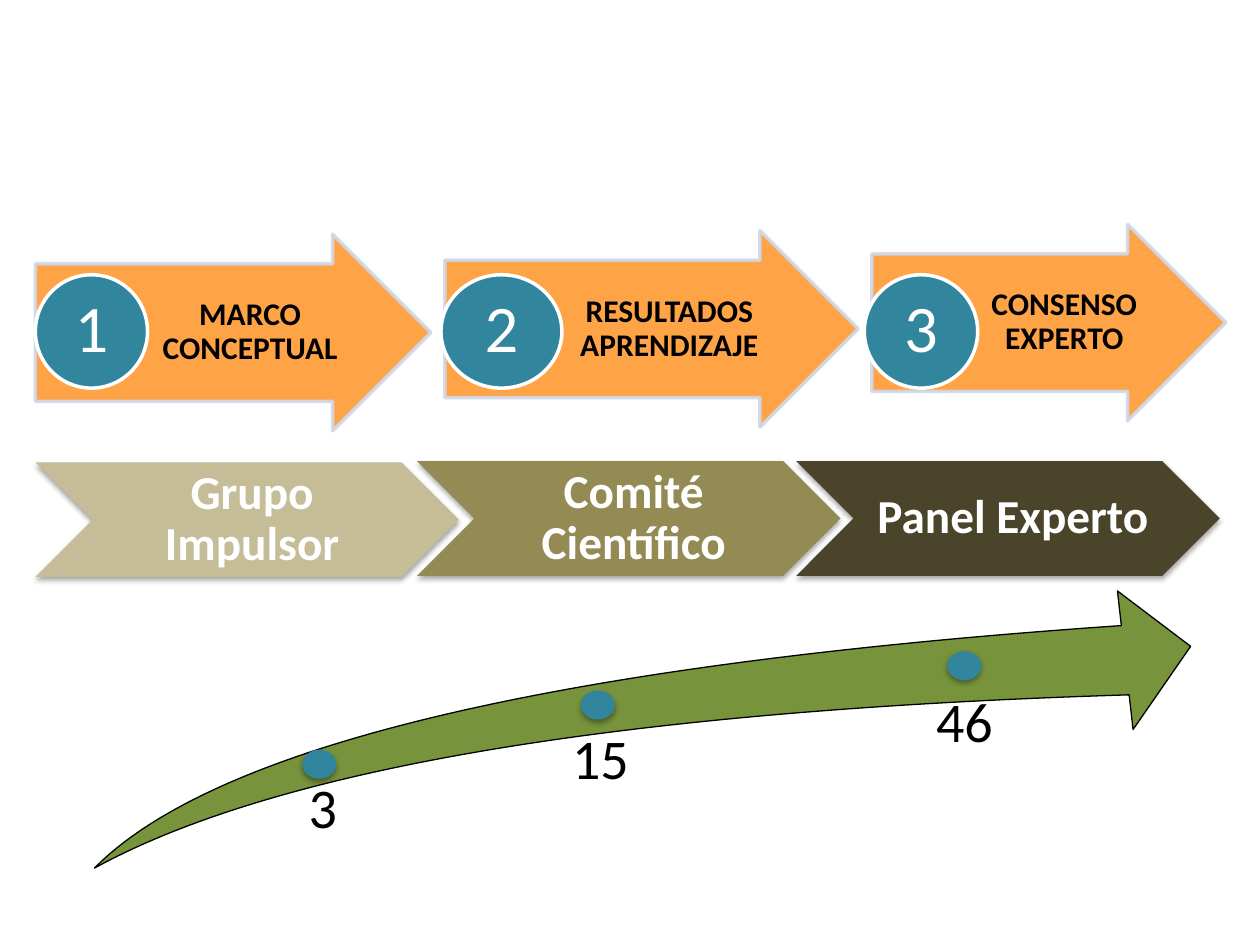
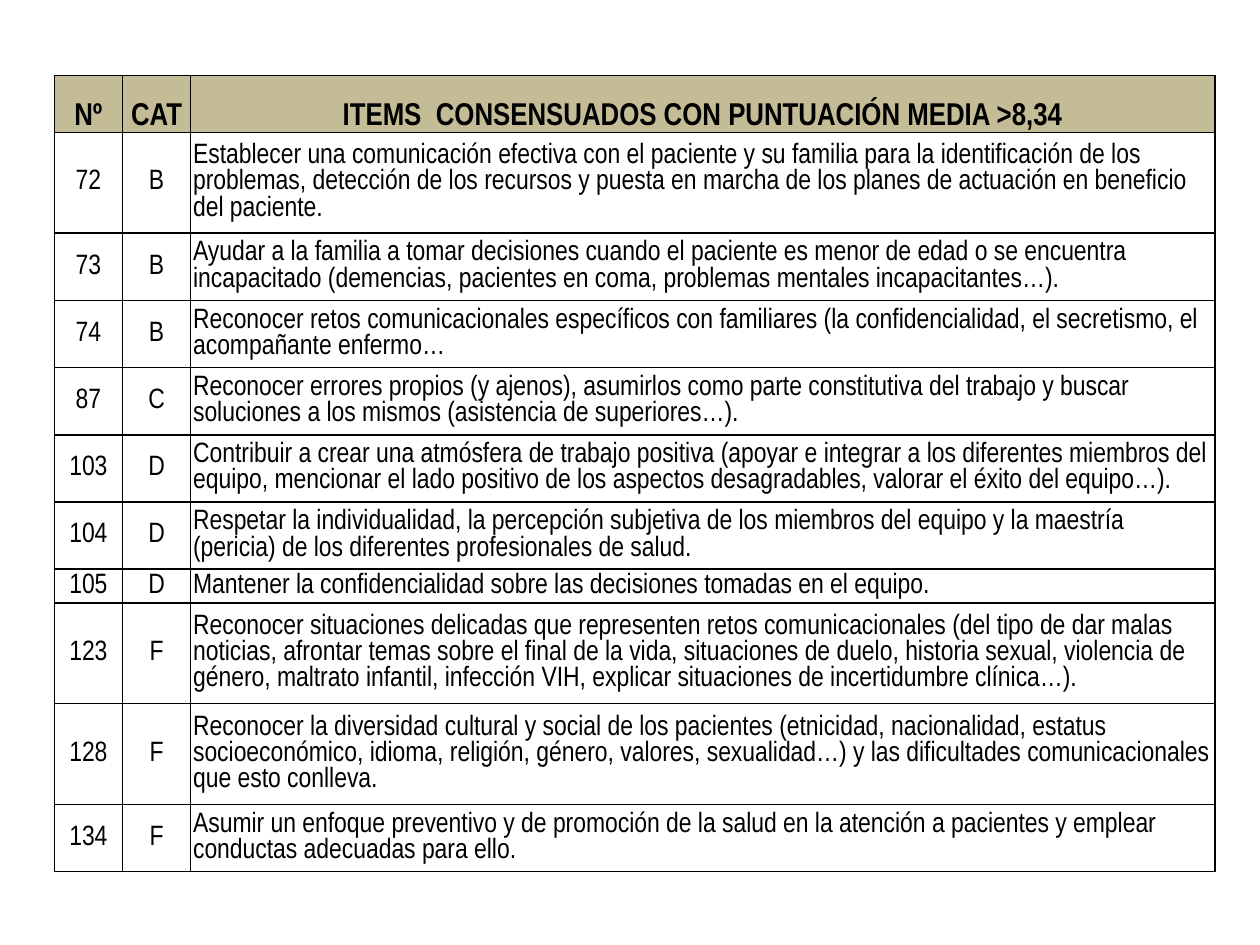
from lxml.etree import SubElement
from pptx import Presentation
from pptx.dml.color import RGBColor
from pptx.enum.shapes import MSO_SHAPE as Preset
from pptx.enum.text import MSO_ANCHOR as Anchor, PP_ALIGN as Align
from pptx.oxml.ns import qn
from pptx.util import Pt

BLACK, WHITE = "000000", "FFFFFF"
ORANGE, TEAL, PALE_BLUE, GREEN = "FF9933", "31859C", "D0D8E8", "77933C"
HEADER_FILL = "C4BC96"
DIAGRAM_FONT, TABLE_FONT = "Calibri", "Arial Narrow"

PHASES = [
    ("MARCO CONCEPTUAL", 20.2, 133.9, 226, 20.2, 64.1),
    ("RESULTADOS APRENDIZAJE", 254.2, 131.8, 236.2, 252, 69.1),
    ("CONSENSO EXPERTO", 498.2, 128.2, 202.3, 493.9, 64.8),
]
GROUPS = [
    ("Grupo Impulsor", 20.2, 264.2, "C4BD97"),
    ("Comité Científico", 238.3, 263.5, "948A54"),
    ("Panel Experto", 455, 263.5, "4A452A"),
]
MEMBERS = [
    ("3", (172.8, 428.4), (176.4, 445.7)),
    ("15", (331.9, 394.6), (326.9, 417.6)),
    ("46", (541.4, 372.2), (534.9, 396.7)),
]
ARROW_HEIGHT = 112.3
ARROW_BODY = 0.7
CIRCLE_TOP, CIRCLE_HEIGHT = 157, 64.8
CHEVRON_SIZE = (242, 65.5)
SWOOSH_BOX = (54, 337.7, 626.4, 158.4)
DOT_SIZE = (19.4, 16.6)

COLUMN_WIDTHS = [39, 39, 585.2]
TABLE_LEFT, TABLE_TOP = 31, 43.2
HEADER_HEIGHT, LINE_HEIGHT = 32.4, 19.2
HEADERS = ("Nº", "CAT", "ITEMS  CONSENSUADOS CON PUNTUACIÓN MEDIA >8,34")
ITEMS = [
    (3, "72", "B", "Establecer una comunicación efectiva con el paciente y su familia para la "
     "identificación de los problemas, detección de los recursos y puesta en marcha de los "
     "planes de actuación en beneficio del paciente."),
    (2, "73", "B", "Ayudar a la familia a tomar decisiones cuando el paciente es menor de edad o se "
     "encuentra incapacitado (demencias, pacientes en coma, problemas mentales incapacitantes…)."),
    (2, "74", "B", "Reconocer retos comunicacionales específicos con familiares (la "
     "confidencialidad, el secretismo, el acompañante enfermo…"),
    (2, "87", "C", "Reconocer errores propios (y ajenos), asumirlos como parte constitutiva del "
     "trabajo y buscar soluciones a los mismos (asistencia de superiores…)."),
    (2, "103", "D", "Contribuir a crear una atmósfera de trabajo positiva (apoyar e integrar a los "
     "diferentes miembros del equipo, mencionar el lado positivo de los aspectos "
     "desagradables, valorar el éxito del equipo…)."),
    (2, "104", "D", "Respetar la individualidad, la percepción subjetiva de los miembros del equipo "
     "y la maestría (pericia) de los diferentes profesionales de salud."),
    (1, "105", "D", "Mantener la confidencialidad sobre las decisiones tomadas en el equipo."),
    (3, "123", "F", "Reconocer situaciones delicadas que representen retos comunicacionales (del "
     "tipo de dar malas noticias, afrontar temas sobre el final de la vida, situaciones de "
     "duelo, historia sexual, violencia de género, maltrato infantil, infección VIH, explicar "
     "situaciones de incertidumbre clínica…)."),
    (3, "128", "F", "Reconocer la diversidad cultural y social de los pacientes (etnicidad, "
     "nacionalidad, estatus socioeconómico, idioma, religión, género, valores, sexualidad…) y "
     "las dificultades comunicacionales que esto conlleva."),
    (2, "134", "F", "Asumir un enfoque preventivo y de promoción de la salud en la atención a "
     "pacientes y emplear conductas adecuadas para ello."),
]


def rgb(color):
    return RGBColor.from_string(color)


def points(values):
    return [Pt(value) for value in values]


def write(frame, text, *, size, font=DIAGRAM_FONT, color=BLACK, bold=False,
          align=Align.CENTER, spacing=0.9):
    paragraph = frame.paragraphs[0]
    paragraph.alignment = align
    paragraph.line_spacing = spacing
    run = paragraph.add_run()
    run.text = text
    run.font.name = font
    run.font.size = Pt(size)
    run.font.bold = bold
    run.font.color.rgb = rgb(color)


def set_frame(frame, insets, anchor):
    frame.word_wrap = True
    frame.vertical_anchor = anchor
    (frame.margin_left, frame.margin_top,
     frame.margin_right, frame.margin_bottom) = points(insets)


def add_text(slide, box, text, insets=(0, 0, 0, 0), anchor=Anchor.TOP, **style):
    frame = slide.shapes.add_textbox(*points(box)).text_frame
    set_frame(frame, insets, anchor)
    write(frame, text, **style)


def add_alpha(parent, percent):
    SubElement(parent, qn("a:alpha"), val=str(percent * 1000))


def add_figure(slide, preset, box, fill, line=None, line_width=1, opacity=100, shadow=False):
    shape = slide.shapes.add_shape(preset, *points(box))
    shape.fill.solid()
    shape.fill.fore_color.rgb = rgb(fill)
    if line:
        shape.line.color.rgb = rgb(line)
        shape.line.width = Pt(line_width)
    else:
        shape.line.fill.background()
    properties = shape.fill._xPr
    if opacity < 100:
        for color in properties.iter(qn("a:srgbClr")):
            add_alpha(color, opacity)
    shape.shadow.inherit = False
    if shadow:
        outer = SubElement(properties.find(qn("a:effectLst")), qn("a:outerShdw"),
                           blurRad=str(Pt(3.1)), dist=str(Pt(1.8)), dir="5400000",
                           rotWithShape="0")
        add_alpha(SubElement(outer, qn("a:srgbClr"), val=BLACK), 35)
    return shape


def add_phase(slide, number, name, left, top, width, circle_left, circle_width):
    arrow = add_figure(slide, Preset.RIGHT_ARROW, (left, top, width, ARROW_HEIGHT),
                       ORANGE, PALE_BLUE, 2, opacity=90)
    arrow.adjustments[0] = ARROW_BODY
    arrow.adjustments[1] = 0.5
    body_height = ARROW_HEIGHT * ARROW_BODY
    body_top = top + (ARROW_HEIGHT - body_height) / 2
    add_text(slide, (left + width * 0.25, body_top, width * 0.58, body_height), name,
             insets=(3.6, 0.7, 2.2, 0.7), anchor=Anchor.MIDDLE, size=18, bold=True)
    circle = add_figure(slide, Preset.OVAL, (circle_left, CIRCLE_TOP, circle_width, CIRCLE_HEIGHT),
                        TEAL, WHITE, 2)
    set_frame(circle.text_frame, (2.2, 2.2, 2.2, 2.2), Anchor.MIDDLE)
    write(circle.text_frame, str(number), size=38, color=WHITE)


def build_process(slide):
    for number, phase in enumerate(PHASES, 1):
        add_phase(slide, number, *phase)
    for name, left, top, color in GROUPS:
        chevron = add_figure(slide, Preset.CHEVRON, (left, top, *CHEVRON_SIZE), color, shadow=True)
        set_frame(chevron.text_frame, (8.6, 2.9, 2.9, 2.9), Anchor.MIDDLE)
        write(chevron.text_frame, name, size=27, color=WHITE, bold=True)
    swoosh = add_figure(slide, Preset.SWOOSH_ARROW, SWOOSH_BOX, GREEN, BLACK, 0.75)
    swoosh.adjustments[0] = swoosh.adjustments[1] = 0.25
    for count, dot, label in MEMBERS:
        add_figure(slide, Preset.OVAL, (*dot, *DOT_SIZE), TEAL, shadow=True)
        add_text(slide, (*label, 55, 40), count, size=32, align=Align.LEFT)


def format_cell(cell, text, fill, anchor, **style):
    cell.margin_left = cell.margin_right = Pt(1.4)
    cell.margin_top = cell.margin_bottom = 0
    cell.vertical_anchor = anchor
    properties = cell._tc.get_or_add_tcPr()
    for side in ("lnL", "lnR", "lnT", "lnB"):
        border = SubElement(properties, qn(f"a:{side}"), w=str(Pt(1)))
        SubElement(SubElement(border, qn("a:solidFill")), qn("a:srgbClr"), val=BLACK)
    cell.fill.solid()
    cell.fill.fore_color.rgb = rgb(fill)
    write(cell.text_frame, text, font=TABLE_FONT, **style)


def build_items(slide):
    heights = [HEADER_HEIGHT] + [lines * LINE_HEIGHT for lines, *_ in ITEMS]
    box = (TABLE_LEFT, TABLE_TOP, sum(COLUMN_WIDTHS), sum(heights))
    table = slide.shapes.add_table(len(heights), len(COLUMN_WIDTHS), *points(box)).table
    for column, width in zip(table.columns, COLUMN_WIDTHS):
        column.width = Pt(width)
    for row, height in zip(table.rows, heights):
        row.height = Pt(height)
    for cell, text in zip(table.rows[0].cells, HEADERS):
        format_cell(cell, text, HEADER_FILL, Anchor.BOTTOM, size=18, bold=True, spacing=1.5)
    for row, (_, *texts) in enumerate(ITEMS, 1):
        for column, text in enumerate(texts):
            format_cell(table.cell(row, column), text, WHITE, Anchor.MIDDLE, size=16, spacing=1.0,
                        align=Align.LEFT if column == 2 else Align.CENTER)


def main():
    presentation = Presentation()
    presentation.slide_width, presentation.slide_height = Pt(720), Pt(540)
    blank = presentation.slide_layouts[6]
    for build in (build_process, build_items):
        build(presentation.slides.add_slide(blank))
    presentation.save("out.pptx")


if __name__ == "__main__":
    main()
